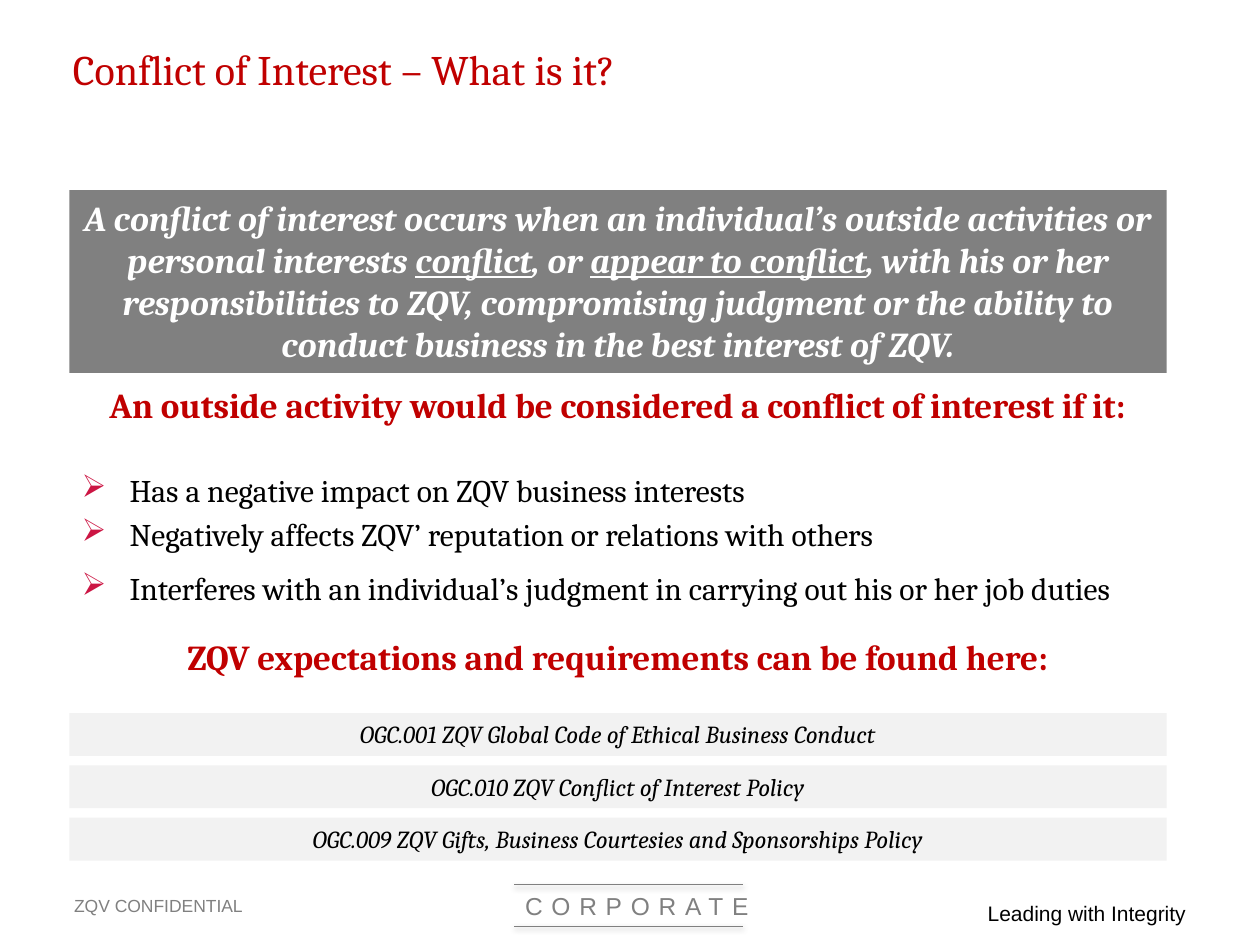
from lxml import etree
from pptx import Presentation
from pptx import util as u
from pptx.dml.color import RGBColor
from pptx.enum import shapes, text
from pptx.oxml import ns

RED = RGBColor(0xC0, 0x00, 0x00)
CRIMSON = RGBColor(0xCC, 0x15, 0x43)
GRAY = RGBColor(0x80, 0x80, 0x80)
PALE = RGBColor(0xF2, 0xF2, 0xF2)
BLACK = RGBColor(0x00, 0x00, 0x00)
WHITE = RGBColor(0xFF, 0xFF, 0xFF)

COLUMNS, ROWS = 100, 75
LEFT, WIDTH = 5.5, 87.1
BAR_TOP, BAR_PITCH, BAR_HEIGHT = 56.6, 4.15, 3.4
CENTER = text.PP_ALIGN.CENTER

POINTS = [
    ("Has a negative impact on ZQV business interests", 0),
    ("Negatively affects ZQV’ reputation or relations with others", 6),
    ("Interferes with an individual’s judgment in carrying out his or her job duties", 12),
]
POLICIES = [
    "OGC.001 ZQV Global Code of Ethical Business Conduct",
    "OGC.010 ZQV Conflict of Interest Policy",
    "OGC.009 ZQV Gifts, Business Courtesies and Sponsorships Policy",
]
DEFINITION = (
    "A conflict of interest occurs when an individual’s outside activities or personal "
    "interests _conflict_, or _appear to conflict_, with his or her responsibilities to ZQV, "
    "compromising judgment or the ability to conduct business in the best interest of ZQV."
)


def child(parent, tag, **attributes):
    """Append a DrawingML element and return it."""
    return etree.SubElement(parent, ns.qn(f"a:{tag}"), attributes)


def write(paragraph, words, size=18, color=BLACK, font="Cambria", bold=False, italic=False,
          align=text.PP_ALIGN.LEFT, before=0, after=0, tracking=0, bullet=None):
    """Fill a paragraph, underlining the words between underscores."""
    paragraph.alignment = align
    paragraph.space_before, paragraph.space_after = u.Pt(before), u.Pt(after)
    if bullet:
        properties = paragraph._p.get_or_add_pPr()
        indent = u.Inches(0.38)
        properties.set("marL", str(indent))
        properties.set("indent", str(-indent))
        child(child(properties, "buClr"), "srgbClr", val=str(CRIMSON))
        child(properties, "buChar", char=bullet)
    for index, part in enumerate(words.split("_")):
        run = paragraph.add_run()
        run.text = part
        run.font.name, run.font.size = font, u.Pt(size)
        run.font.bold, run.font.italic = bold, italic
        run.font.underline = index % 2 == 1
        run.font.color.rgb = color
        if tracking:
            run._r.get_or_add_rPr().set("spc", str(tracking * 100))


class Deck:
    """Hold the grid, the presentation and its current slide."""

    def __init__(self):
        """Open a presentation with one blank slide."""
        self.presentation = Presentation()
        self.presentation.slide_width = u.Inches(10)
        self.presentation.slide_height = u.Inches(7.5)
        self.slide = self.presentation.slides.add_slide(self.presentation.slide_layouts[6])

    def place(self, column, row):
        """Turn grid columns and rows into lengths."""
        return (int(self.presentation.slide_width * column / COLUMNS),
                int(self.presentation.slide_height * row / ROWS))

    def box(self, column, row, columns, rows, anchor=text.MSO_ANCHOR.TOP, wrap=True):
        """Add an empty text box and return its frame."""
        shape = self.slide.shapes.add_textbox(*self.place(column, row), *self.place(columns, rows))
        frame = shape.text_frame
        frame.word_wrap, frame.vertical_anchor = wrap, anchor
        return frame

    def label(self, words, *area, anchor=text.MSO_ANCHOR.TOP, wrap=True, **style):
        """Add a text box with one paragraph."""
        write(self.box(*area, anchor=anchor, wrap=wrap).paragraphs[0], words, **style)

    def band(self, words, row, rows, fill, **style):
        """Add a filled band across the content width."""
        shape = self.slide.shapes.add_shape(
            shapes.MSO_SHAPE.RECTANGLE, *self.place(LEFT, row), *self.place(WIDTH, rows))
        shape.shadow.inherit = False
        shape.fill.solid()
        shape.fill.fore_color.rgb = fill
        shape.line.fill.background()
        shape.text_frame.word_wrap = True
        shape.text_frame.vertical_anchor = text.MSO_ANCHOR.TOP
        write(shape.text_frame.paragraphs[0], words, italic=True, align=CENTER, **style)

    def rule(self, start, end, row):
        """Add a thin horizontal line with a soft shadow below."""
        line = self.slide.shapes.add_connector(
            shapes.MSO_CONNECTOR.STRAIGHT, *self.place(start, row), *self.place(end, row))
        line.line.color.rgb, line.line.width = GRAY, u.Pt(0.5)
        shadow = child(child(line._element.spPr, "effectLst"), "outerShdw",
                       blurRad=str(u.Pt(3.1)), dist=str(u.Pt(1.6)), dir="5400000", rotWithShape="0")
        child(child(shadow, "srgbClr", val=str(BLACK)), "alpha", val="38000")


def main():
    """Build the conflict of interest slide."""
    deck = Deck()
    middle = text.MSO_ANCHOR.MIDDLE
    deck.label("ZQV CONFIDENTIAL", 4.9, 70.5, 16.3, 2.7, anchor=middle,
               size=10, color=GRAY, font="Arial")
    deck.label("CORPORATE", 39.7, 70.2, 20.7, 5.7, size=14, color=GRAY, font="Arial",
               align=text.PP_ALIGN.RIGHT, tracking=5)
    for row in (70.2, 73.5):
        deck.rule(40.8, 59, row)
    deck.label("Leading with Integrity", 77.4, 71, 17.9, 3, wrap=False, size=12, font="Arial")
    deck.label("Conflict of Interest – What is it?", 4.8, 0.7, 83.3, 9.5, anchor=middle,
               size=24, color=RED)

    body = deck.box(LEFT, 29.5, WIDTH, 26)
    body.margin_top = u.Inches(0.09)
    heading = dict(size=20, color=RED, bold=True, align=CENTER)
    write(body.paragraphs[0], "An outside activity would be considered a conflict of interest if it:",
          after=22.5, **heading)
    for words, after in POINTS:
        write(body.add_paragraph(), words, before=3.6, after=after, bullet="➢")
    write(body.add_paragraph(), "ZQV expectations and requirements can be found here:",
          before=4, **heading)

    deck.band(DEFINITION, 15.1, 14.5, GRAY, size=20, color=WHITE, bold=True)
    for index, policy in enumerate(POLICIES):
        deck.band(policy, BAR_TOP + index * BAR_PITCH, BAR_HEIGHT, PALE, size=14)
    deck.presentation.save("out.pptx")


if __name__ == "__main__":
    main()
